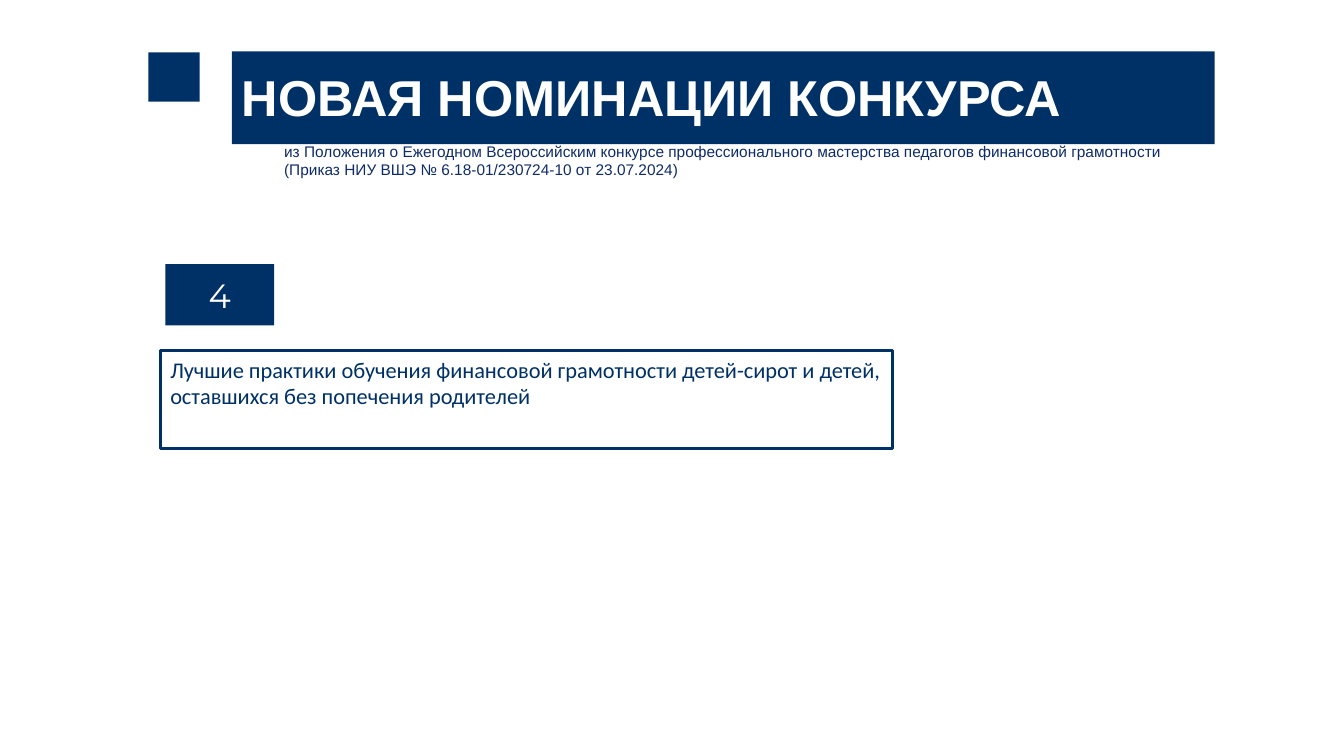
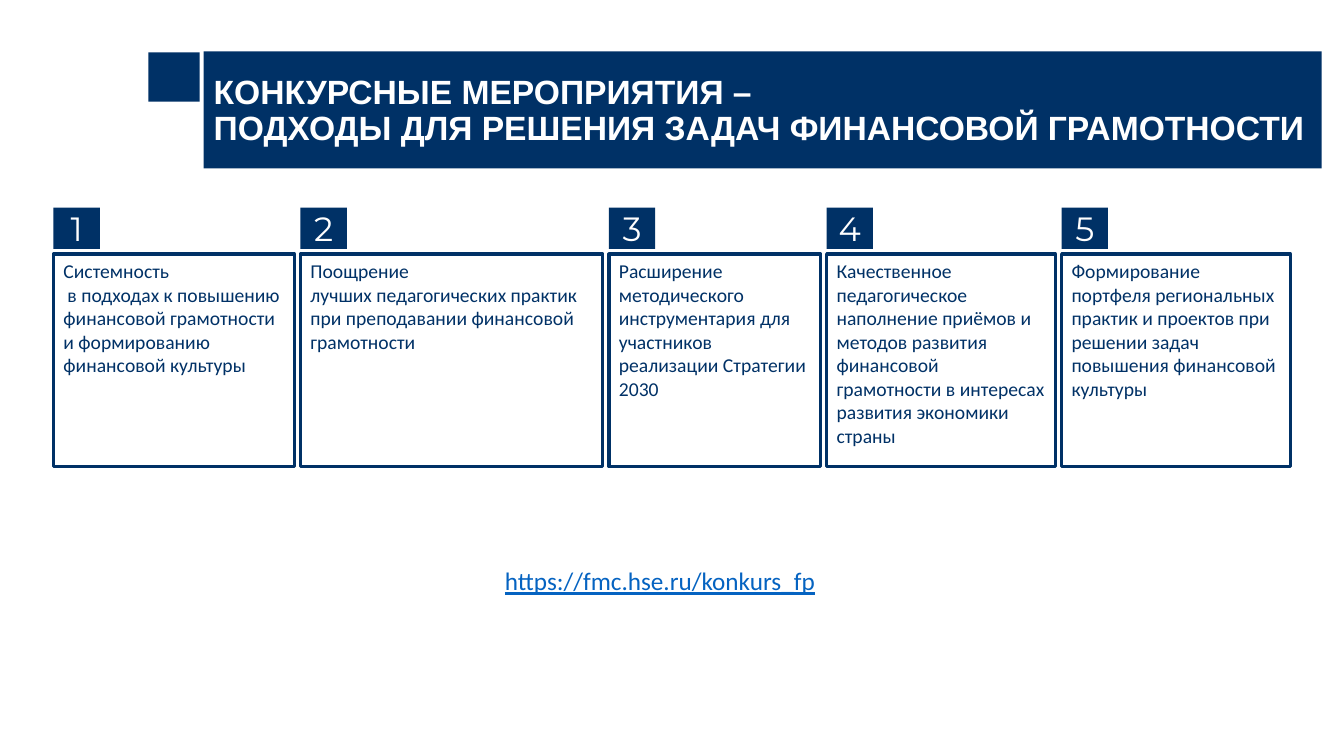
from dataclasses import dataclass
from typing import Any, NamedTuple

from pptx import Presentation
from pptx import util as u
from pptx.dml.color import RGBColor
from pptx.enum import shapes, text

WIDTH, HEIGHT = u.Inches(13.33), u.Inches(7.5)
TITLE_ONLY = 5


@dataclass(frozen=True)
class Theme:
    navy: RGBColor = RGBColor(0x00, 0x31, 0x66)
    ink: RGBColor = RGBColor(0x0F, 0x2C, 0x68)
    link: RGBColor = RGBColor(0x05, 0x63, 0xC1)
    white: RGBColor = RGBColor(0xFF, 0xFF, 0xFF)
    title_font: str = "Arial"
    body_font: str = "Calibri"
    badge_font: str = "Montserrat"
    large_title: int = 36
    title: int = 24
    badge: int = 24
    address: int = 18
    large_body: int = 16
    body: int = 14
    note: int = 11
    border: float = 2.25


THEME = Theme()


class Area(NamedTuple):
    """Left, top, width and height as percentages of the slide."""
    left: float
    top: float
    width: float
    height: float

    def lengths(self) -> tuple[int, int, int, int]:
        return (int(WIDTH * self.left / 100), int(HEIGHT * self.top / 100),
                int(WIDTH * self.width / 100), int(HEIGHT * self.height / 100))


@dataclass(frozen=True)
class Style:
    name: str
    size: float
    color: RGBColor
    bold: bool = False
    underline: bool = False
    align: Any = text.PP_ALIGN.LEFT
    anchor: Any = text.MSO_ANCHOR.TOP
    spacing: float = 1.0


@dataclass(frozen=True)
class Card:
    width: float
    lines: tuple[str, ...]
    last_indent: float = 0


BADGE = Style(THEME.badge_font, THEME.badge, THEME.white,
              align=text.PP_ALIGN.CENTER, anchor=text.MSO_ANCHOR.MIDDLE)
BODY = Style(THEME.body_font, THEME.body, THEME.navy)
LARGE_BODY = Style(THEME.body_font, THEME.large_body, THEME.navy)
NOTE = Style(THEME.title_font, THEME.note, THEME.ink)
ADDRESS = Style(THEME.body_font, THEME.address, THEME.link, underline=True)

EMBLEM = Area(11.03, 6.93, 3.83, 6.53)
CARDS_LEFT, CARDS_TOP, CARDS_HEIGHT, CARDS_GAP = 3.98, 33.6, 28.13, 0.45
BADGE_TOP, BADGE_WIDTH, BADGE_HEIGHT = 27.47, 3.45, 5.47

CARDS = (
    Card(17.93, ("Системность", "в подходах к повышению финансовой грамотности "
                 "и формированию финансовой культуры"), last_indent=0.04),
    Card(22.5, ("Поощрение", "лучших педагогических практик при преподавании "
                "финансовой грамотности")),
    Card(15.75, ("Расширение методического инструментария для участников "
                 "реализации Стратегии 2030",)),
    Card(17.03, ("Качественное педагогическое наполнение приёмов и методов "
                 "развития финансовой грамотности в интересах развития "
                 "экономики страны",)),
    Card(17.03, ("Формирование портфеля региональных практик и проектов при "
                 "решении задач повышения финансовой культуры",)),
)


def apply(target: Any, values: dict[str, Any]) -> None:
    for name, value in values.items():
        setattr(target, name, value)


def write(box: Any, lines: tuple[str, ...], style: Style) -> None:
    frame = box.text_frame
    frame.text = "\n".join(lines)
    apply(frame, {"word_wrap": True, "auto_size": text.MSO_AUTO_SIZE.NONE,
                  "vertical_anchor": style.anchor})
    for para in frame.paragraphs:
        apply(para, {"alignment": style.align, "line_spacing": style.spacing,
                     "space_before": u.Pt(0)})
        for span in para.runs:
            apply(span.font, {"name": style.name, "size": u.Pt(style.size),
                              "bold": style.bold, "underline": style.underline})
            span.font.color.rgb = style.color


def fill_navy(box: Any) -> None:
    box.fill.solid()
    box.fill.fore_color.rgb = THEME.navy


def add_rectangle(page: Any, area: Area) -> Any:
    box = page.shapes.add_shape(shapes.MSO_SHAPE.RECTANGLE, *area.lengths())
    box.shadow.inherit = False
    return box


def add_block(page: Any, area: Area) -> Any:
    box = add_rectangle(page, area)
    fill_navy(box)
    box.line.fill.background()
    return box


def add_badge(page: Any, area: Area, number: int) -> None:
    write(add_block(page, area), (str(number),), BADGE)


def add_card(page: Any, area: Area, lines: tuple[str, ...], style: Style) -> Any:
    box = add_rectangle(page, area)
    box.fill.background()
    box.line.color.rgb = THEME.navy
    box.line.width = u.Pt(THEME.border)
    write(box, lines, style)
    return box


def add_text(page: Any, area: Area, line: str, style: Style) -> None:
    write(page.shapes.add_textbox(*area.lengths()), (line,), style)


def add_page(deck: Any, area: Area, lines: tuple[str, ...], size: int) -> Any:
    page = deck.slides.add_slide(deck.slide_layouts[TITLE_ONLY])
    title = page.shapes.title
    apply(title, dict(zip(("left", "top", "width", "height"), area.lengths())))
    fill_navy(title)
    write(title, lines, Style(THEME.title_font, size, THEME.white, bold=True,
                              anchor=text.MSO_ANCHOR.MIDDLE, spacing=0.9))
    apply(title.text_frame, {
        "margin_left": u.Inches(0.1), "margin_right": u.Inches(0.1),
        "margin_top": u.Inches(0.04), "margin_bottom": 0})
    add_block(page, EMBLEM)
    return page


def add_nomination_page(deck: Any) -> None:
    page = add_page(deck, Area(17.25, 6.8, 73.13, 12.27),
                    ("НОВАЯ НОМИНАЦИИ КОНКУРСА",), THEME.large_title)
    add_text(page, Area(20.4, 18.13, 70, 6.67),
             "из Положения о Ежегодном Всероссийским конкурсе профессионального "
             "мастерства педагогов финансовой грамотности "
             "(Приказ НИУ ВШЭ № 6.18-01/230724-10 от 23.07.2024)", NOTE)
    add_badge(page, Area(12.3, 34.93, 8.1, 8.13), 4)
    add_card(page, Area(11.93, 46.4, 54.46, 12.93),
             ("Лучшие практики обучения финансовой грамотности детей-сирот и детей,",
              "оставшихся без попечения родителей"), LARGE_BODY)


def add_events_page(deck: Any) -> None:
    page = add_page(deck, Area(15.15, 6.8, 83.18, 15.47),
                    ("КОНКУРСНЫЕ МЕРОПРИЯТИЯ –",
                     "ПОДХОДЫ ДЛЯ РЕШЕНИЯ ЗАДАЧ ФИНАНСОВОЙ ГРАМОТНОСТИ"),
                    THEME.title)
    left = CARDS_LEFT
    for number, card in enumerate(CARDS, start=1):
        box = add_card(page, Area(left, CARDS_TOP, card.width, CARDS_HEIGHT),
                       card.lines, BODY)
        if card.last_indent:
            properties = box.text_frame.paragraphs[-1]._p.get_or_add_pPr()
            properties.set("indent", str(int(u.Inches(card.last_indent))))
        add_badge(page, Area(left, BADGE_TOP, BADGE_WIDTH, BADGE_HEIGHT), number)
        left += card.width + CARDS_GAP
    add_text(page, Area(36.83, 74.13, 25.58, 5.4),
             "https://fmc.hse.ru/konkurs_fp", ADDRESS)


def main() -> None:
    deck = Presentation()
    apply(deck, {"slide_width": WIDTH, "slide_height": HEIGHT})
    add_nomination_page(deck)
    add_events_page(deck)
    deck.save("out.pptx")


if __name__ == "__main__":
    main()
